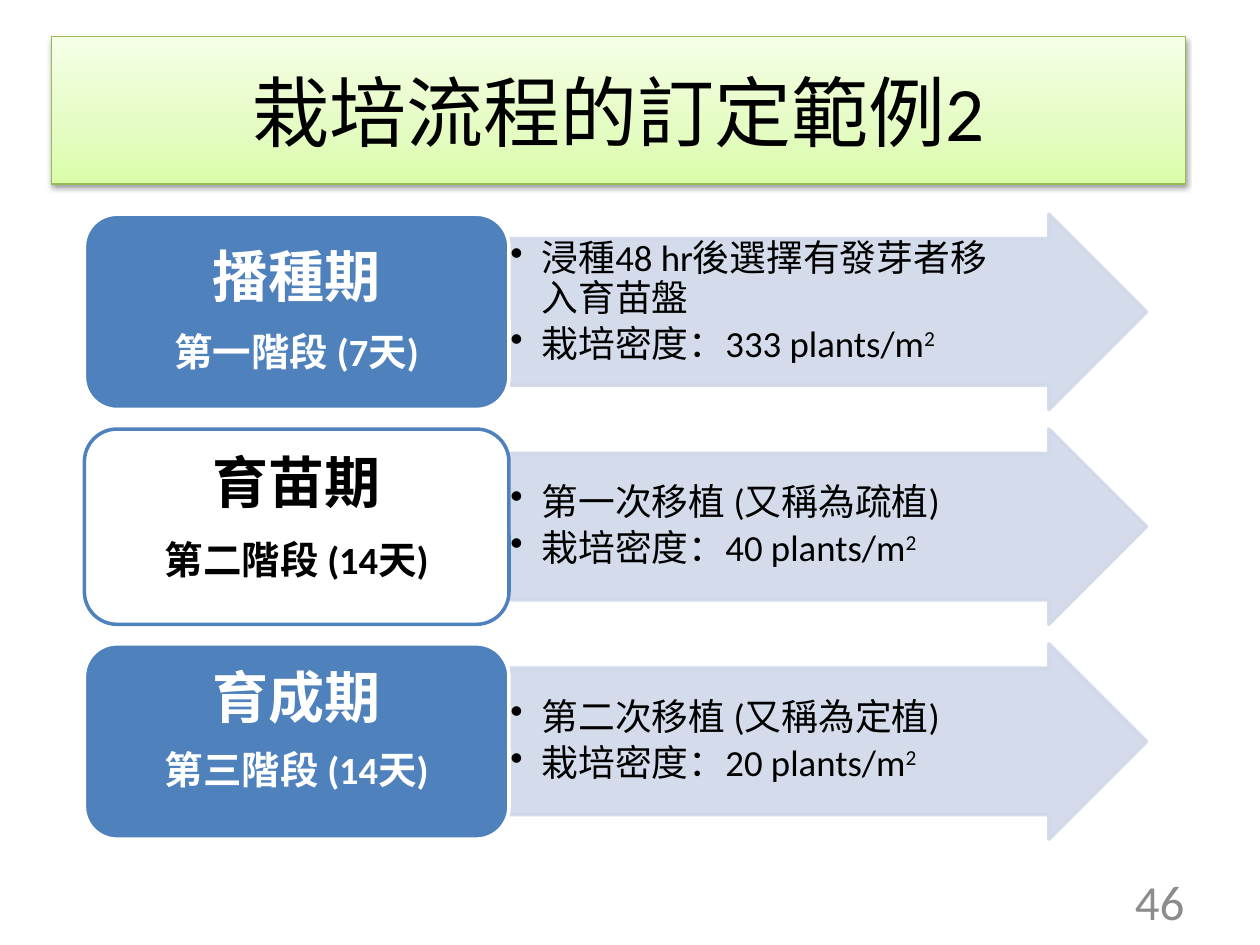
from copy import deepcopy
from lxml.etree import SubElement as Sub
from pptx import Presentation
from pptx.dml.color import RGBColor as Rgb
from pptx.enum.shapes import MSO_SHAPE as Shape
from pptx.enum.text import MSO_ANCHOR as Anchor, PP_ALIGN as Align
from pptx.oxml.ns import qn
from pptx.util import Inches, Pt

BLACK = Rgb(0, 0, 0)
WHITE = Rgb(255, 255, 255)
BLUE = Rgb(0x4F, 0x81, 0xBD)
PALE = Rgb(0xD0, 0xD8, 0xE8)
GRAY = Rgb(0x8C, 0x8C, 0x8C)
EDGE = Rgb(0x98, 0xB9, 0x55)
GREENS = [(0, Rgb(0xDA, 0xFD, 0xA7)), (0.35, Rgb(0xE4, 0xFC, 0xC2)),
          (1, Rgb(0xF5, 0xFF, 0xE7))]

STAGES = [
    ("播種期", "第一階段 (7天)", "浸種48 hr後選擇有發芽者移入育苗盤", "333",
     BLUE, WHITE, WHITE, 0.9, Anchor.TOP),
    ("育苗期", "第二階段 (14天)", "第一次移植 (又稱為疏植)", "40",
     WHITE, BLUE, BLACK, Pt(25), Anchor.MIDDLE),
    ("育成期", "第三階段 (14天)", "第二次移植 (又稱為定植)", "20",
     BLUE, WHITE, WHITE, Pt(22), Anchor.MIDDLE),
]


class Deck:
    latin = "Calibri"
    asian = "Noto Sans CJK SC"

    def __init__(self, slide):
        self.slide = slide

    def run(self, para, text, size, color, bold=False, raised=False):
        run = para.add_run()
        run.text = text
        font = run.font
        font.size = Pt(size)
        font.bold = bold
        font.color.rgb = color
        font.name = self.latin
        props = run._r.get_or_add_rPr()
        Sub(props, qn("a:ea"), typeface=self.asian)
        if raised:
            props.set("baseline", "30000")

    def frame(self, shape, anchor, left, top, right, bottom):
        frame = shape.text_frame
        frame.word_wrap = True
        frame.vertical_anchor = anchor
        frame.margin_left, frame.margin_top = Inches(left), Inches(top)
        frame.margin_right, frame.margin_bottom = Inches(right), Inches(bottom)
        return frame

    def block(self, kind, box, fill, line):
        shape = self.slide.shapes.add_shape(kind, *map(Inches, box))
        shape.shadow.inherit = False
        shape.fill.solid()
        shape.fill.fore_color.rgb = fill
        shape.line.color.rgb = line
        shape.line.width = Pt(2)
        return shape

    def title(self, text, box):
        shape = self.slide.shapes.title
        shape.left, shape.top, shape.width, shape.height = map(Inches, box)
        fill = shape.fill
        fill.gradient()
        fill.gradient_angle = 90
        stops = shape._element.spPr.find(".//" + qn("a:gsLst"))
        stops.append(deepcopy(stops[-1]))
        for stop, (spot, color) in zip(fill.gradient_stops, GREENS):
            stop.position = spot
            stop.color.rgb = color
        shape.line.color.rgb = EDGE
        shape.line.width = Pt(0.75)
        glow = Sub(Sub(shape._element.spPr, qn("a:effectLst")),
                   qn("a:outerShdw"), blurRad="40000", dist="20000",
                   dir="5400000", rotWithShape="0")
        tint = Sub(glow, qn("a:srgbClr"), val="000000")
        Sub(tint, qn("a:alpha"), val="38000")
        frame = self.frame(shape, Anchor.MIDDLE, 0.1, 0.05, 0.1, 0.05)
        para = frame.paragraphs[0]
        para.alignment = Align.CENTER
        self.run(para, text, 44, BLACK)

    def number(self, text, box):
        shape = self.slide.shapes.add_textbox(*map(Inches, box))
        frame = self.frame(shape, Anchor.MIDDLE, 0.1, 0.05, 0.1, 0.05)
        para = frame.paragraphs[0]
        para.alignment = Align.RIGHT
        self.run(para, text, 28, GRAY)

    def bullet(self, para):
        para.line_spacing = 0.9
        para.space_after = Pt(4)
        props = para._p.get_or_add_pPr()
        props.set("marL", str(Inches(0.25)))
        props.set("indent", str(-Inches(0.25)))
        Sub(props, qn("a:buChar"), char="•")

    def arrow(self, box, task, count, anchor):
        shape = self.block(Shape.RIGHT_ARROW, box, PALE, PALE)
        shape.adjustments[0] = 0.75
        shape.adjustments[1] = 0.5
        for color in shape._element.spPr.iter(qn("a:srgbClr")):
            Sub(color, qn("a:alpha"), val="90000")
        frame = self.frame(shape, anchor, 0.01, 0.01, 0.4, 0.01)
        first, last = frame.paragraphs[0], frame.add_paragraph()
        for para in (first, last):
            para.alignment = Align.LEFT
            self.bullet(para)
        self.run(first, task, 21, BLACK)
        self.run(last, f"栽培密度：{count} plants/m", 21, BLACK)
        self.run(last, "2", 21, BLACK, raised=True)

    def card(self, box, name, phase, fill, line, ink, pitch):
        shape = self.block(Shape.ROUNDED_RECTANGLE, box, fill, line)
        frame = self.frame(shape, Anchor.MIDDLE, 0.13, 0.07, 0.13, 0.07)
        first, last = frame.paragraphs[0], frame.add_paragraph()
        for para, text, size in ((first, name, 32), (last, phase, 22)):
            para.alignment = Align.CENTER
            para.line_spacing = pitch
            para.space_after = Pt(size * 0.42)
            self.run(para, text, size, ink, bold=True)


def main():
    prs = Presentation()
    prs.slide_width, prs.slide_height = Inches(10), Inches(7.5)
    deck = Deck(prs.slides.add_slide(prs.slide_layouts[5]))
    deck.title("栽培流程的訂定範例2", (0.41, 0.29, 9, 1.17))
    deck.number("46", (7.17, 6.95, 2.33, 0.4))
    for row, stage in enumerate(STAGES):
        name, phase, task, count, fill, line, ink, pitch, anchor = stage
        top = 1.7 + row * 1.705
        deck.arrow((4.04, top, 5.06, 1.55), task, count, anchor)
        deck.card((0.67, top, 3.37, 1.55), name, phase, fill, line, ink, pitch)
    prs.save("out.pptx")


if __name__ == "__main__":
    main()
